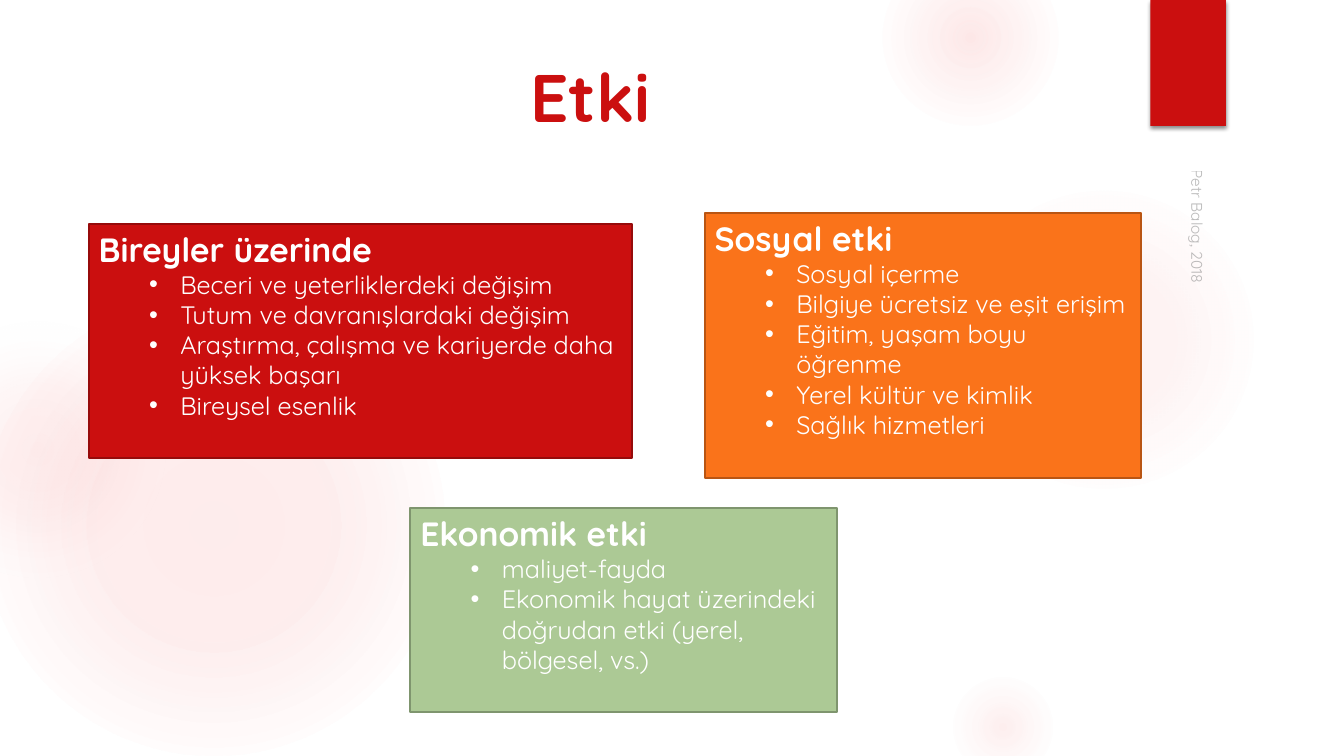
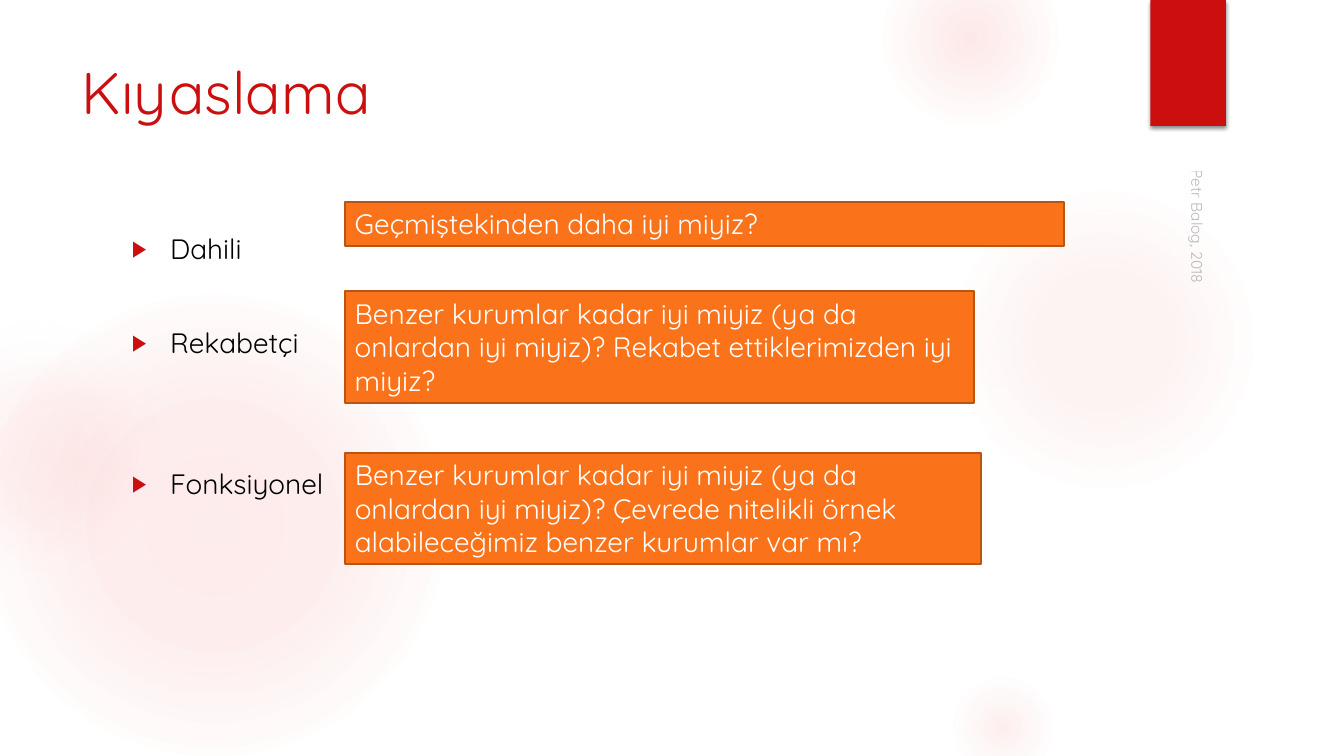
from lxml import etree
from pptx import Presentation
from pptx.dml.color import RGBColor
from pptx.enum.shapes import MSO_SHAPE
from pptx.enum.text import MSO_ANCHOR, PP_ALIGN
from pptx.oxml import parse_xml
from pptx.oxml.ns import nsdecls, qn
from pptx.util import Inches, Pt

RECT, ELLIPSE = MSO_SHAPE.RECTANGLE, MSO_SHAPE.OVAL
TOP, BOTTOM = MSO_ANCHOR.TOP, MSO_ANCHOR.BOTTOM
LEFT, CENTER = PP_ALIGN.LEFT, PP_ALIGN.CENTER

FONT = "Quicksand"
COLORS = {
    "red": "CB0F0F", "red_edge": "960B0B",
    "orange": "FA731A", "orange_edge": "B95513",
    "green": "ACC995", "green_edge": "7F956E",
    "glow": "F35C5C", "glow_pale": "F3F3F3",
    "white": "FFFFFF", "black": "000000", "grey": "8C8C8C",
}

# Soft circles: left, top, diameter, then (position %, colour, opacity %) stops
GLOWS = [
    (-0.17, 2.92, 4.58, [(0, "glow", 11), (36, "glow", 10), (75, "glow", 0)]),
    (-0.92, 3.17, 2.58, [(0, "glow", 8), (36, "glow", 5), (71, "glow_pale", 0)]),
    (9.41, 1.83, 3.08, [(0, "glow", 7), (36, "glow", 6), (69, "glow", 0)]),
    (8.75, -0.5, 1.75, [(0, "glow", 14), (36, "glow", 7), (73, "glow", 0)]),
    (9.41, 6.67, 1.08, [(0, "glow", 10), (31, "glow", 5), (66, "glow", 0)]),
]
TITLE_BOX = (0.71, 0.5, 10.29, 1.53)
CREDIT_BOX = (9.79, 3.53, 4.22, 0.33)

IMPACTS = [
    ((0.88, 2.22, 5.39, 2.32), "red", "Bireyler üzerinde", [
        "Beceri ve yeterliklerdeki değişim",
        "Tutum ve davranışlardaki değişim",
        "Araştırma, çalışma ve kariyerde daha yüksek başarı",
        "Bireysel esenlik"]),
    ((6.99, 2.11, 4.33, 2.63), "orange", "Sosyal etki", [
        "Sosyal içerme",
        "Bilgiye ücretsiz ve eşit erişim",
        "Eğitim, yaşam boyu öğrenme",
        "Yerel kültür ve kimlik",
        "Sağlık hizmetleri"]),
    ((4.07, 5.04, 4.23, 2.02), "green", "Ekonomik etki", [
        "maliyet-fayda",
        "Ekonomik hayat üzerindeki doğrudan etki (yerel, bölgesel, vs.)"]),
]

# Kind of benchmarking and the space above it in points
BENCHMARKS = [("Dahili", 0), ("Rekabetçi", 43), ("Fonksiyonel", 77)]
QUESTIONS = [
    ((3.42, 2, 7.13, 0.44), "Geçmiştekinden daha iyi miyiz?"),
    ((3.42, 2.89, 6.24, 1.11),
     "Benzer kurumlar kadar iyi miyiz (ya da onlardan iyi miyiz)? "
     "Rekabet ettiklerimizden iyi miyiz?"),
    ((3.42, 4.49, 6.31, 1.11),
     "Benzer kurumlar kadar iyi miyiz (ya da onlardan iyi miyiz)? "
     "Çevrede nitelikli örnek alabileceğimiz benzer kurumlar var mı?"),
]


def rgb(name):
    return RGBColor.from_string(COLORS[name])


def add_block(slide, kind, box, fill=None, edge=None):
    block = slide.shapes.add_shape(kind, *map(Inches, box))
    block.shadow.inherit = False
    if fill:
        block.fill.solid()
        block.fill.fore_color.rgb = rgb(fill)
    else:
        block.fill.background()
    if edge:
        block.line.color.rgb = rgb(edge)
        block.line.width = Pt(1.5)
    else:
        block.line.fill.background()
    return block


def add_text_box(slide, box):
    return slide.shapes.add_textbox(*map(Inches, box))


def prepare_frame(holder, anchor=TOP):
    frame = holder.text_frame
    frame.word_wrap = True
    frame.vertical_anchor = anchor
    return frame


def add_line(frame, text, size, color, bold=False, align=LEFT, before=0):
    """Write one paragraph, using the empty first one if it is free."""
    first = frame.paragraphs[0]
    line = frame.add_paragraph() if first.runs else first
    line.alignment = align
    line.space_before = Pt(before)
    run = line.add_run()
    run.text = text
    run.font.name, run.font.size, run.font.bold = FONT, Pt(size), bold
    run.font.color.rgb = rgb(color)
    return line


def add_bullet(line, char, margin, hanging, color=None, percent=None):
    props = line._p.get_or_add_pPr()
    props.set("marL", str(Inches(margin)))
    props.set("indent", str(-Inches(hanging)))
    if color:
        tint = etree.SubElement(props, qn("a:buClr"))
        etree.SubElement(tint, qn("a:srgbClr"), val=COLORS[color])
    if percent:
        etree.SubElement(props, qn("a:buSzPct"), val=str(percent * 1000))
    etree.SubElement(props, qn("a:buFont"), typeface="Arial")
    etree.SubElement(props, qn("a:buChar"), char=char)


def add_glow(slide, left, top, diameter, stops):
    glow = add_block(slide, ELLIPSE, (left, top, diameter, diameter))
    stop_xml = "".join(
        f'<a:gs pos="{pos * 1000}"><a:srgbClr val="{COLORS[color]}">'
        f'<a:alpha val="{opacity * 1000}"/></a:srgbClr></a:gs>'
        for pos, color, opacity in stops)
    gradient = parse_xml(
        f'<a:gradFill {nsdecls("a")} rotWithShape="1"><a:gsLst>{stop_xml}</a:gsLst>'
        '<a:path path="circle"><a:fillToRect l="50000" t="50000" r="50000" b="50000"/>'
        '</a:path></a:gradFill>')
    props = glow._element.spPr
    props.replace(props.find(qn("a:noFill")), gradient)


def add_ribbon(slide):
    ribbon = add_block(slide, RECT, (11.41, 0, 0.75, 1.25), "red")
    effects = ribbon._element.spPr.find(qn("a:effectLst"))
    shadow = etree.SubElement(effects, qn("a:outerShdw"), blurRad=str(Pt(3)),
                              dist=str(Pt(2)), dir="5400000", rotWithShape="0")
    tint = etree.SubElement(shadow, qn("a:srgbClr"), val=COLORS["black"])
    etree.SubElement(tint, qn("a:alpha"), val="45000")


def add_credit(slide):
    credit = add_text_box(slide, CREDIT_BOX)
    credit.rotation = 90
    line = add_line(prepare_frame(credit, BOTTOM), "Petr Balog, 2018", 11, "grey")
    for tint in line._p.iter(qn("a:srgbClr")):
        etree.SubElement(tint, qn("a:alpha"), val="60000")


def start_slide(prs, title, size, bold=False, align=LEFT):
    """Blank slide with the shared backdrop, title and credit."""
    slide = prs.slides.add_slide(prs.slide_layouts[6])
    for glow in GLOWS:
        add_glow(slide, *glow)
    add_ribbon(slide)
    title_frame = prepare_frame(add_text_box(slide, TITLE_BOX))
    add_line(title_frame, title, size, "red", bold, align)
    add_credit(slide)
    return slide


def add_impact(slide, box, color, heading, points):
    card = add_block(slide, RECT, box, color, f"{color}_edge")
    frame = prepare_frame(card)
    add_line(frame, heading, 24, "white", bold=True)
    for point in points:
        add_bullet(add_line(frame, point, 18, "white"), "•", 0.81, 0.31)


def add_benchmarks(slide, box):
    frame = prepare_frame(add_text_box(slide, box))
    for label, before in BENCHMARKS:
        line = add_line(frame, label, 20, "black", before=before)
        add_bullet(line, "▶", 0.38, 0.38, "red", 80)


def add_question(slide, box, question):
    panel = add_block(slide, RECT, box, "orange", "orange_edge")
    add_line(prepare_frame(panel), question, 20, "white")


def build_impact_slide(prs):
    slide = start_slide(prs, "Etki", 48, bold=True, align=CENTER)
    for impact in IMPACTS:
        add_impact(slide, *impact)


def build_benchmark_slide(prs):
    slide = start_slide(prs, "Kıyaslama", 42)
    add_benchmarks(slide, (1.21, 2.25, 9.78, 4.59))
    for box, question in QUESTIONS:
        add_question(slide, box, question)


def main():
    prs = Presentation()
    prs.slide_width, prs.slide_height = Inches(13.33), Inches(7.5)
    build_impact_slide(prs)
    build_benchmark_slide(prs)
    prs.save("out.pptx")


if __name__ == "__main__":
    main()
